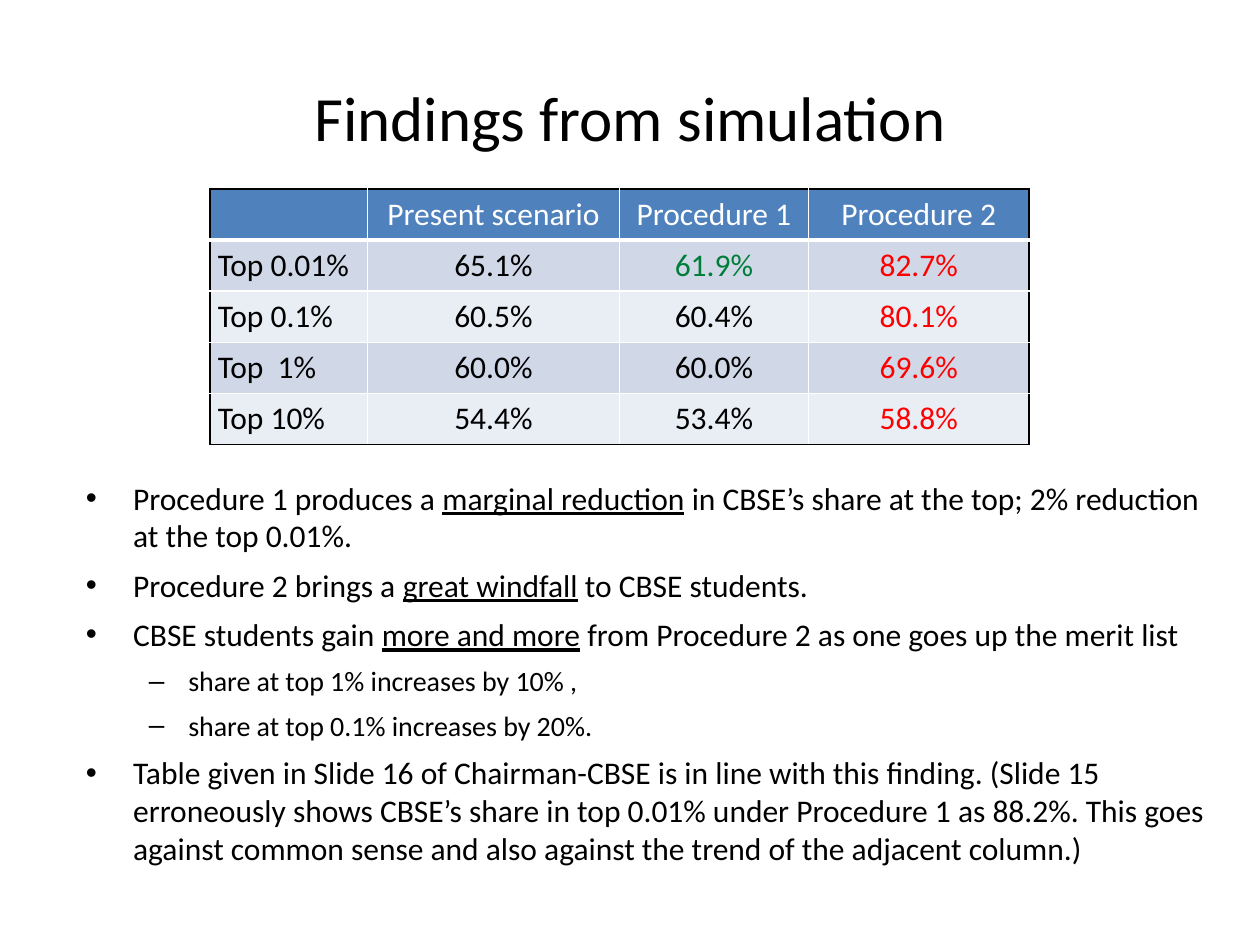
from dataclasses import dataclass

from lxml.etree import SubElement
from pptx import Presentation
from pptx.dml.color import RGBColor as RGB
from pptx.enum.text import MSO_ANCHOR as Anchor, PP_ALIGN as Align
from pptx.oxml.ns import qn
from pptx.util import Pt


@dataclass(frozen=True)
class Theme:
    font: str = "Calibri"
    ink: str = "000000"
    white: str = "FFFFFF"
    good: str = "007E39"
    bad: str = "FF0000"
    header: str = "4F81BD"
    bands: tuple = ("D0D8E8", "E9EDF4")
    title: float = 36
    body: float = 18
    sub: float = 16


@dataclass(frozen=True)
class Level:
    bullet: str
    margin: float
    hang: float
    size: float


@dataclass(frozen=True)
class Point:
    text: str  # underscores enclose underlined words
    level: int = 0


T = Theme()
LEVELS = (Level("•", 27, 27, T.body), Level("–", 58.5, 22.5, T.sub))
COL_WIDTHS = (90, 144, 108, 126)
ROW_HEIGHT = 29.2
ROWS = (
    ("", "Present scenario", "Procedure 1", "Procedure 2"),
    ("Top 0.01%", "65.1%", "61.9%", "82.7%"),
    ("Top 0.1%", "60.5%", "60.4%", "80.1%"),
    ("Top  1%", "60.0%", "60.0%", "69.6%"),
    ("Top 10%", "54.4%", "53.4%", "58.8%"),
)
POINTS = (
    Point("Procedure 1 produces a _marginal reduction_ in CBSE’s share at the top; "
          "2% reduction at the top 0.01%."),
    Point("Procedure 2 brings a _great windfall_ to CBSE students."),
    Point("CBSE students gain _more and more_ from Procedure 2 as one goes up the merit list"),
    Point("share at top 1% increases by 10% ,", 1),
    Point("share at top 0.1% increases by 20%.", 1),
    Point("Table given in Slide 16 of Chairman-CBSE is in line with this finding. "
          "(Slide 15 erroneously shows CBSE’s share in top 0.01% under Procedure 1 as 88.2%. "
          "This goes against common sense and also against the trend of the adjacent column.)"),
)


def write(p, text: str, *, size: float = T.body, color: str = T.ink, align=Align.LEFT) -> None:
    """Fill a paragraph, underlining the words between underscores."""
    p.alignment = align
    for i, part in enumerate(text.split("_")):
        r = p.add_run()
        r.text = part
        r.font.name, r.font.size, r.font.bold = T.font, Pt(size), False
        r.font.color.rgb = RGB.from_string(color)
        if i % 2:
            r.font.underline = True


def add_box(s, left: float, top: float, width: float, height: float, anchor=Anchor.TOP):
    tf = s.shapes.add_textbox(Pt(left), Pt(top), Pt(width), Pt(height)).text_frame
    tf.word_wrap = True
    tf.vertical_anchor = anchor
    return tf


def set_bullet(p, level: Level) -> None:
    pPr = p._p.get_or_add_pPr()
    pPr.set("marL", str(Pt(level.margin)))
    pPr.set("indent", str(-Pt(level.hang)))
    SubElement(pPr, qn("a:buFont"), typeface="Arial")
    SubElement(pPr, qn("a:buChar"), char=level.bullet)


def add_border(cell, side: str, color: str, width: float) -> None:
    ln = SubElement(cell._tc.get_or_add_tcPr(), qn(f"a:ln{side}"), w=str(Pt(width)))
    SubElement(SubElement(ln, qn("a:solidFill")), qn("a:srgbClr"), val=color)


def cell_color(row: int, col: int) -> str:
    if row == 0:
        return T.white
    if col == 3:
        return T.bad
    return T.good if (row, col) == (1, 2) else T.ink


def style_cell(cell, row: int, col: int) -> None:
    """Draw a dark outer frame, white inner rules and the banded fill."""
    outer = {"L": col == 0, "R": col == len(COL_WIDTHS) - 1,
             "T": row == 0, "B": row == len(ROWS) - 1}
    for side, is_outer in outer.items():
        heavy = (row, side) in ((0, "B"), (1, "T"))
        add_border(cell, side, T.ink if is_outer else T.white, 3 if heavy and row == 0 else 1)
    cell.fill.solid()
    cell.fill.fore_color.rgb = RGB.from_string(T.bands[(row - 1) % 2] if row else T.header)
    cell.margin_left = cell.margin_right = Pt(4.5)
    cell.margin_top = cell.margin_bottom = Pt(3.6)


def add_results(s, left: float, top: float) -> None:
    table = s.shapes.add_table(len(ROWS), len(COL_WIDTHS), Pt(left), Pt(top),
                               Pt(sum(COL_WIDTHS)), Pt(ROW_HEIGHT * len(ROWS))).table
    table.first_row = table.horz_banding = False
    for column, width in zip(table.columns, COL_WIDTHS):
        column.width = Pt(width)
    for i, values in enumerate(ROWS):
        table.rows[i].height = Pt(ROW_HEIGHT)
        for j, value in enumerate(values):
            cell = table.cell(i, j)
            style_cell(cell, i, j)
            if value:
                write(cell.text_frame.paragraphs[0], value, color=cell_color(i, j),
                      align=Align.CENTER if j else Align.LEFT)


def add_points(s, left: float, top: float, width: float, height: float) -> None:
    tf = add_box(s, left, top, width, height)
    for i, point in enumerate(POINTS):
        p = tf.add_paragraph() if i else tf.paragraphs[0]
        level = LEVELS[point.level]
        p.level = point.level
        p.space_before, p.space_after = Pt(0.2 * level.size), Pt(3)
        set_bullet(p, level)
        write(p, point.text, size=level.size)


def main() -> None:
    prs = Presentation()
    prs.slide_width, prs.slide_height = Pt(720), Pt(540)
    s = prs.slides.add_slide(prs.slide_layouts[6])
    title = add_box(s, 36, 21.6, 648, 90, Anchor.MIDDLE)
    write(title.paragraphs[0], "Findings from simulation", size=T.title, align=Align.CENTER)
    add_results(s, 120, 108)
    add_points(s, 42, 270, 654, 246)
    prs.save("out.pptx")


if __name__ == "__main__":
    main()
